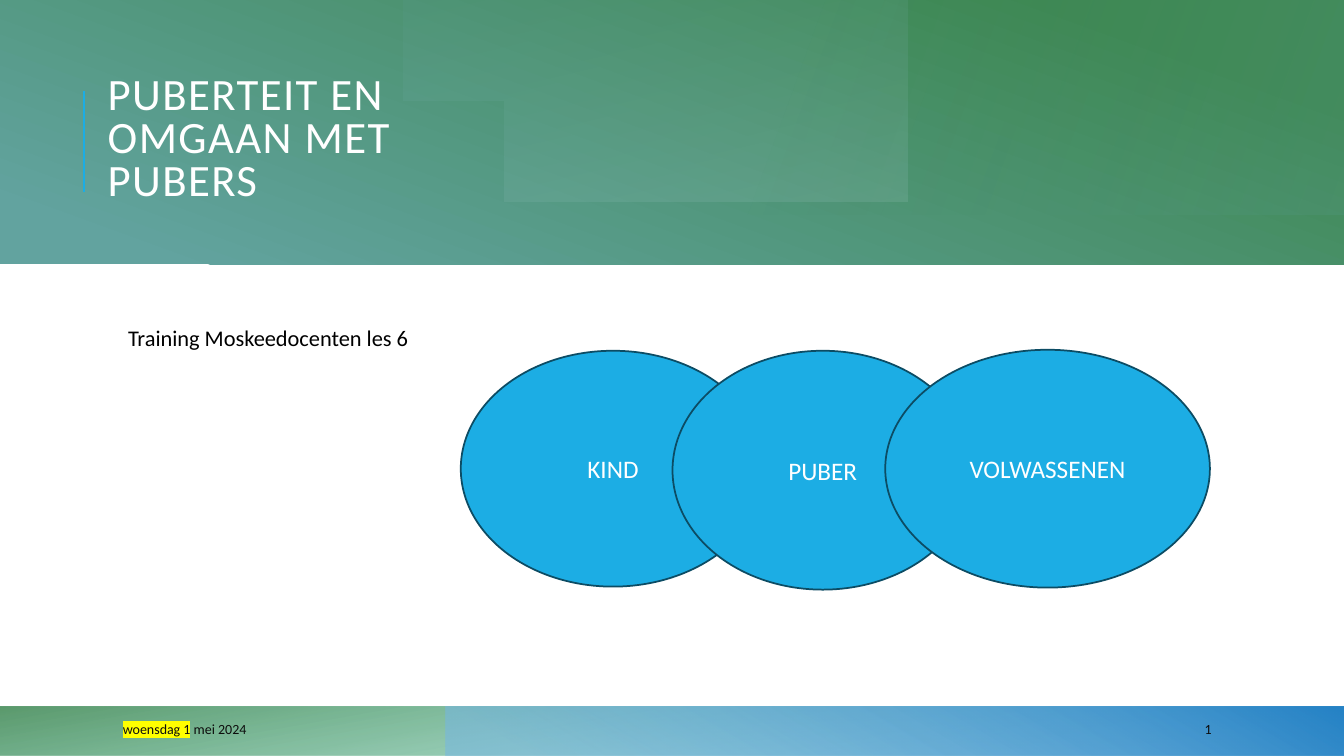
import math

from lxml import etree
from pptx import Presentation
from pptx.dml.color import RGBColor
from pptx.enum.shapes import MSO_CONNECTOR, MSO_SHAPE
from pptx.enum.text import MSO_ANCHOR, PP_ALIGN
from pptx.oxml.ns import qn
from pptx.util import Inches, Pt

RECTANGLE, ELLIPSE = MSO_SHAPE.RECTANGLE, MSO_SHAPE.OVAL
STRAIGHT = MSO_CONNECTOR.STRAIGHT
TOP, MIDDLE = MSO_ANCHOR.TOP, MSO_ANCHOR.MIDDLE
LEFT, CENTER = PP_ALIGN.LEFT, PP_ALIGN.CENTER

FONT = "Calibri"
WIDTH, HEIGHT = 13.33, 7.5
ACCENT, OUTLINE = "1CADE4", "0C4C64"
TEAL, GREEN = "62A39F", "3E8853"
WHITE, BLACK, DARK = "FFFFFF", "000000", "0D0D0D"


def color(value):
    return RGBColor.from_string(value)


def inches(box):
    return [Inches(length) for length in box]


def fill_gradient(shape, stops, angle):
    """Stops are (position, colour, opacity) in percent; angle is counterclockwise."""
    shape.shadow.inherit = False
    shape.fill.gradient()
    shape.fill.gradient_angle = angle
    for stop, (position, value, _) in zip(shape.fill.gradient_stops, stops):
        stop.position = position / 100
        stop.color.rgb = color(value)
    color_elements = shape._element.spPr.iter(qn("a:srgbClr"))
    for element, (_, _, opacity) in zip(list(color_elements), stops):
        etree.SubElement(element, qn("a:alpha"), val=str(opacity * 1000))
    shape.line.fill.background()


def add_band(slide, box, stops, angle):
    band = slide.shapes.add_shape(RECTANGLE, *inches(box))
    fill_gradient(band, stops, angle)


def add_run(paragraph, text, size, value, highlight=None, spacing=None):
    run = paragraph.add_run()
    run.text = text
    run.font.size = Pt(size)
    run.font.color.rgb = color(value)
    run.font.name = FONT
    properties = run.font._element
    if highlight:
        mark = etree.Element(qn("a:highlight"))
        etree.SubElement(mark, qn("a:srgbClr"), val=highlight)
        properties.find(qn("a:solidFill")).addnext(mark)
    if spacing:
        properties.set("spc", str(spacing * 100))


def add_text(slide, box, anchor=MIDDLE, inset=0.1):
    frame = slide.shapes.add_textbox(*inches(box)).text_frame
    frame.word_wrap = True
    frame.vertical_anchor = anchor
    frame.margin_left = frame.margin_right = Inches(inset)
    frame.margin_top = frame.margin_bottom = Inches(0.05)
    paragraph = frame.paragraphs[0]
    paragraph.alignment = LEFT
    return paragraph


def add_disc(slide, center_x, center_y, radius):
    """Part of a circle below the top edge of the slide."""
    start = math.asin(-center_y / radius)
    steps = 90
    angles = [start + (math.pi - 2 * start) * step / steps for step in range(steps + 1)]
    points = [(center_x + radius * math.cos(angle), center_y + radius * math.sin(angle))
              for angle in angles]
    builder = slide.shapes.build_freeform(*points[0], scale=Inches(1))
    builder.add_line_segments(points[1:], close=True)
    fill_gradient(builder.convert_to_shape(), [(0, TEAL, 12), (100, "A1C8C5", 20)], 283)


def add_header(slide, left, top, width, height):
    add_band(slide, (left, top, width, height), [(8, TEAL, 100), (86, GREEN, 100)], 70)
    add_disc(slide, left + 6.77, top - 0.37, 2.73)
    add_band(slide, (left + width / 3, top, width * 2 / 3, 2.13),
             [(0, TEAL, 16), (62, GREEN, 0)], 160)

    # Accent rule and title
    rule = slide.shapes.add_connector(
        STRAIGHT, *inches((left + 0.83, top + 1.9, left + 0.83, top + 0.9)))
    rule.line.color.rgb = color(ACCENT)
    rule.line.width = Pt(1.5)
    etree.SubElement(rule._element.spPr, qn("a:effectLst"))
    title = add_text(slide, (left + 0.97, top + 0.5, 3.97, 1.8))
    title.line_spacing = 0.8
    add_run(title, "PUBERTEIT EN OMGAAN MET PUBERS", 32, WHITE, spacing=1)


def add_subject(slide, box):
    subject = add_text(slide, box, TOP, 0.05)
    subject._p.get_or_add_pPr().set("marL", str(Inches(0.1)))
    subject.line_spacing = 0.9
    subject.space_before = Pt(12)
    subject.space_after = Pt(2)
    add_run(subject, "Training Moskeedocenten les 6", 16, BLACK)


def add_phases(slide, left, top):
    phases = [("KIND", 0, 0.01, 3.02, 2.34),
              ("PUBER", 2.1, 0.01, 2.98, 2.37),
              ("VOLWASSENEN", 4.21, 0, 3.22, 2.36)]
    for name, shift, drop, width, height in phases:
        phase = slide.shapes.add_shape(
            ELLIPSE, *inches((left + shift, top + drop, width, height)))
        phase.shadow.inherit = False
        phase.fill.solid()
        phase.fill.fore_color.rgb = color(ACCENT)
        phase.line.color.rgb = color(OUTLINE)
        phase.line.width = Pt(1.25)
        phase.text_frame.vertical_anchor = MIDDLE
        paragraph = phase.text_frame.paragraphs[0]
        paragraph.alignment = CENTER
        add_run(paragraph, name, 18, WHITE)


def add_footer(slide, left, top, width, height):
    split = width / 3
    add_band(slide, (left, top, width, height), [(14, "42BA97", 28), (100, GREEN, 85)], 100)
    add_band(slide, (left + split - 0.02, top, width - split + 0.02, height),
             [(9, "75B6E5", 55), (99, "2683C6", 100)], 60)

    # Date and slide number
    date = add_text(slide, (left + 1.12, top + 0.07, 2.36, 0.3))
    number = add_text(slide, (left + 11.85, top + 0.07, 1.06, 0.3))
    date.space_after = number.space_after = Pt(6)
    add_run(date, "woensdag 1", 10, DARK, highlight="FFFF00")
    add_run(date, " mei 2024", 10, DARK)
    add_run(number, "1", 10, DARK)


def main():
    presentation = Presentation()
    presentation.slide_width = Inches(WIDTH)
    presentation.slide_height = Inches(HEIGHT)
    slide = presentation.slides.add_slide(presentation.slide_layouts[6])
    add_footer(slide, 0, 7.01, WIDTH, 0.49)
    add_header(slide, 0, 0, WIDTH, 2.62)
    add_subject(slide, (1.12, 3.2, 3.43, 3.39))
    add_phases(slide, 4.57, 3.47)
    presentation.save("out.pptx")


if __name__ == "__main__":
    main()
